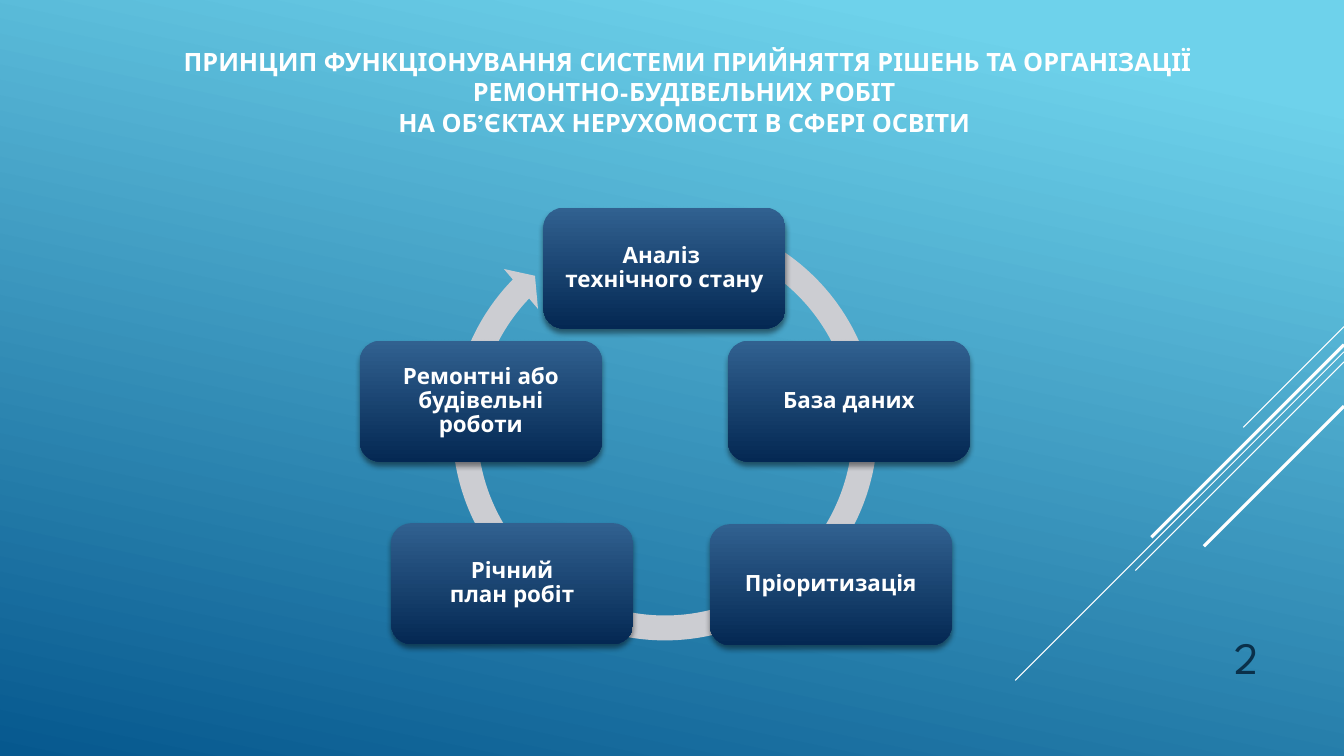
import pptx
import pptx.util
import pptx.dml.color
import pptx.enum.shapes
import pptx.enum.text
import pptx.oxml.ns
import lxml.etree

Inches = pptx.util.Inches
Pt = pptx.util.Pt
qn = pptx.oxml.ns.qn
Align = pptx.enum.text.PP_ALIGN
Anchor = pptx.enum.text.MSO_ANCHOR
Fit = pptx.enum.text.MSO_AUTO_SIZE
Kind = pptx.enum.shapes.MSO_SHAPE


def hue(code):
    return pptx.dml.color.RGBColor.from_string(code)


def put(item, look):
    for name, value in look.items():
        setattr(item, name, value)


class Deck:
    face = "League Spartan"
    white = "FFFFFF"
    navy = "0A304A"
    ring = "CCCDD2"
    sky = ((0.1, "6ED2EB"), (1, "06588E"))
    card = ((0, "316190"), (1, "042853"))

    def __init__(self, wide, high):
        self.file = pptx.Presentation()
        put(self.file, {"slide_width": Inches(wide), "slide_height": Inches(high)})
        self.page = self.file.slides.add_slide(self.file.slide_layouts[5])
        self.blend(self.page.background.fill, self.sky, 102)

    def blend(self, fill, stops, angle):
        fill.gradient()
        fill.gradient_angle = 360 - angle
        for stop, (spot, code) in zip(fill.gradient_stops, stops):
            stop.position = spot
            stop.color.rgb = hue(code)

    def label(self, frame, lines, size, code, look, bold=True, align=Align.CENTER, lead=1):
        put(frame, {"word_wrap": True, **look})
        for index, words in enumerate(lines):
            para = frame.add_paragraph() if index else frame.paragraphs[0]
            put(para, {"text": words, "alignment": align, "line_spacing": lead})
            for run in para.runs:
                put(run.font, {"name": self.face, "size": Pt(size), "bold": bold})
                run.font.color.rgb = hue(code)

    def title(self, area, lines):
        head = self.page.shapes.title
        put(head, dict(zip(("left", "top", "width", "height"), map(Inches, area))))
        look = {"vertical_anchor": Anchor.TOP, "auto_size": Fit.SHAPE_TO_FIT_TEXT}
        self.label(head.text_frame, lines, 18, self.white, look)

    def number(self, area, words):
        box = self.page.shapes.add_textbox(*map(Inches, area))
        look = {"vertical_anchor": Anchor.BOTTOM}
        self.label(box.text_frame, [words], 32, self.navy, look, False, Align.RIGHT)

    def line(self, top, span, weight):
        edge = 13.33
        ends = map(Inches, (edge, top, edge - span, top + span))
        link = self.page.shapes.add_connector(pptx.enum.shapes.MSO_CONNECTOR.STRAIGHT, *ends)
        link.line.color.rgb = hue(self.white)
        link.line.width = Pt(weight)
        lxml.etree.SubElement(link._element.spPr, qn("a:effectLst"))

    def shape(self, kind, area):
        item = self.page.shapes.add_shape(kind, *map(Inches, area))
        item.shadow.inherit = False
        item.line.fill.background()
        return item

    def arrow(self, area, bends):
        item = self.shape(Kind.CIRCULAR_ARROW, area)
        item.fill.solid()
        item.fill.fore_color.rgb = hue(self.ring)
        for index, bend in enumerate(bends):
            item.adjustments[index] = bend

    def step(self, left, top, words):
        item = self.shape(Kind.ROUNDED_RECTANGLE, (left, top, 2.4, 1.2))
        self.blend(item.fill, self.card, 90)
        self.shade(item)
        sides = ("left", "top", "right", "bottom")
        look = {f"margin_{side}": Inches(0.13) for side in sides}
        look["vertical_anchor"] = Anchor.MIDDLE
        self.label(item.text_frame, [words], 16, self.white, look, lead=0.9)

    def shade(self, item):
        group = item._element.spPr.find(qn("a:effectLst"))
        cast = lxml.etree.SubElement(group, qn("a:outerShdw"), {
            "blurRad": str(Pt(4)), "dist": str(Pt(3)), "dir": "5400000", "rotWithShape": "0"})
        tint = lxml.etree.SubElement(cast, qn("a:srgbClr"), val="000000")
        lxml.etree.SubElement(tint, qn("a:alpha"), val="46000")


def main():
    deck = Deck(13.33, 7.5)
    for top, span, weight in (
        (3.24, 1, 0.75),
        (3.49, 3.26, 0.75),
        (3.59, 2.07, 0.75),
        (3.42, 1.91, 2.25),
        (4.03, 1.39, 2.25),
    ):
        deck.line(top, span, weight)
    deck.number((11.33, 6.1, 1.25, 0.73), "2")
    deck.arrow((4.35, 2, 4.49, 4.49), (0.055, 3.307, 134.39, 175.946, 0.058))
    for left, top, words in (
        (5.39, 2.06, "Аналіз \nтехнічного стану"),
        (7.22, 3.38, "База даних"),
        (7.04, 5.2, "Пріоритизація"),
        (3.88, 5.19, "Річний\nплан робіт"),
        (3.57, 3.38, "Ремонтні або будівельні роботи"),
    ):
        deck.step(left, top, words)
    deck.title((1.44, 0.41, 10.76, 1.01), (
        "ПРИНЦИП ФУНКЦІОНУВАННЯ СИСТЕМИ ПРИЙНЯТТЯ РІШЕНЬ ТА ОРГАНІЗАЦІЇ РЕМОНТНО-БУДІВЕЛЬНИХ РОБІТ ",
        "НА ОБ’ЄКТАХ НЕРУХОМОСТІ В СФЕРІ ОСВІТИ ",
    ))
    deck.file.save("out.pptx")


if __name__ == "__main__":
    main()
